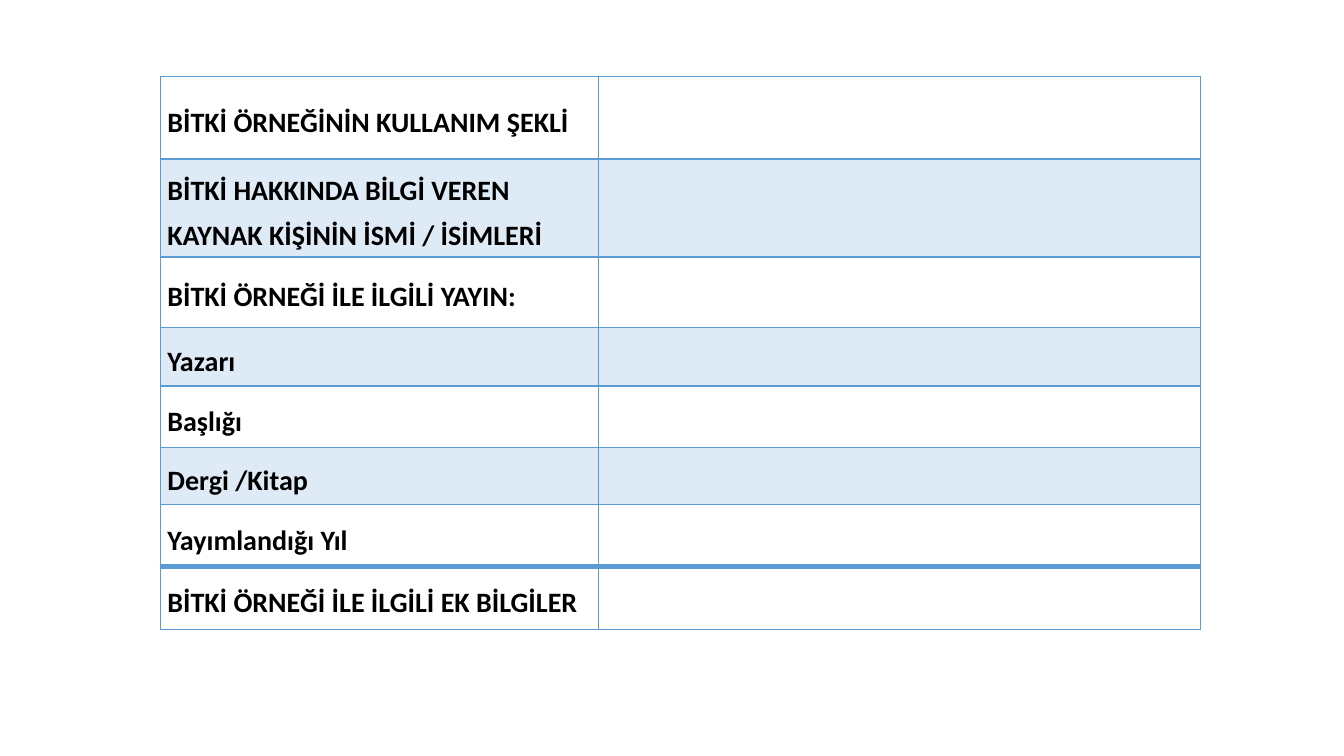
from dataclasses import dataclass

from lxml import etree
from pptx import Presentation, util as u
from pptx.dml.color import RGBColor
from pptx.enum import text
from pptx.oxml import ns


@dataclass(frozen=True)
class Theme:
    accent: str = "5B9BD5"
    ink: str = "000000"
    font: str = "Calibri"
    label_size: int = 20
    band_opacity: int = 20  # percent
    thin: int = 1
    medium: int = 2
    thick: int = 4


THEME = Theme()

# Each row: label, height in inches
FORM_ROWS = [
    ("BİTKİ ÖRNEĞİNİN KULLANIM ŞEKLİ", 0.82),
    ("BİTKİ HAKKINDA BİLGİ VEREN KAYNAK KİŞİNİN İSMİ / İSİMLERİ", 0.97),
    ("BİTKİ ÖRNEĞİ İLE İLGİLİ YAYIN:", 0.7),
    ("Yazarı", 0.58),
    ("Başlığı", 0.61),
    ("Dergi /Kitap", 0.57),
    ("Yayımlandığı Yıl", 0.61),
    ("BİTKİ ÖRNEĞİ İLE İLGİLİ EK BİLGİLER", 0.63),
]
BANDED_ROWS = (1, 3, 5)
LABEL_SHARE = 0.4215  # label column's share of the table width


def fill_cell(cell, banded):
    if not banded:
        cell.fill.background()
        return
    cell.fill.solid()
    cell.fill.fore_color.rgb = RGBColor.from_string(THEME.accent)
    color = cell._tc.tcPr.find(".//" + ns.qn("a:srgbClr"))
    etree.SubElement(color, ns.qn("a:alpha"), val=str(THEME.band_opacity * 1000))


def border_cell(cell, top, bottom):
    """Draw the four borders; they must come before the fill in the XML."""
    sides = {"L": THEME.thin, "R": THEME.thin, "T": top, "B": bottom}
    for index, (side, width) in enumerate(sides.items()):
        line = etree.Element(ns.qn(f"a:ln{side}"), w=str(u.Pt(width)))
        solid = etree.SubElement(line, ns.qn("a:solidFill"))
        etree.SubElement(solid, ns.qn("a:srgbClr"), val=THEME.accent)
        cell._tc.get_or_add_tcPr().insert(index, line)


def write_label(cell, label):
    cell.text = label
    cell.vertical_anchor = text.MSO_ANCHOR.MIDDLE
    cell.margin_left = cell.margin_right = u.Inches(0.07)
    cell.margin_top = cell.margin_bottom = 0
    paragraph = cell.text_frame.paragraphs[0]
    paragraph.line_spacing = 1.3
    paragraph.space_after = u.Pt(10)
    paragraph.font.name = THEME.font
    paragraph.font.size = u.Pt(THEME.label_size)
    paragraph.font.bold = True
    paragraph.font.color.rgb = RGBColor.from_string(THEME.ink)


def add_plant_form(slide, left, top, width):
    height = u.Inches(sum(row_height for _, row_height in FORM_ROWS))
    table = slide.shapes.add_table(len(FORM_ROWS), 2, left, top, width, height).table
    table.first_row = table.horz_banding = False

    # Columns: labels and blank answers
    table.columns[0].width = int(width * LABEL_SHARE)
    table.columns[1].width = width - table.columns[0].width

    # Heavier rules under the first row and above the last
    rules = [THEME.thin] * (len(FORM_ROWS) + 1)
    rules[1] = THEME.medium
    rules[-2] = THEME.thick

    for index, (label, row_height) in enumerate(FORM_ROWS):
        table.rows[index].height = u.Inches(row_height)
        write_label(table.cell(index, 0), label)
        for cell in table.rows[index].cells:
            fill_cell(cell, index in BANDED_ROWS)
            border_cell(cell, rules[index], rules[index + 1])


def main():
    presentation = Presentation()
    presentation.slide_width = u.Inches(13.33)
    presentation.slide_height = u.Inches(7.5)
    slide = presentation.slides.add_slide(presentation.slide_layouts[6])
    add_plant_form(slide, u.Inches(1.59), u.Inches(0.76), u.Inches(10.32))
    presentation.save("out.pptx")


if __name__ == "__main__":
    main()
